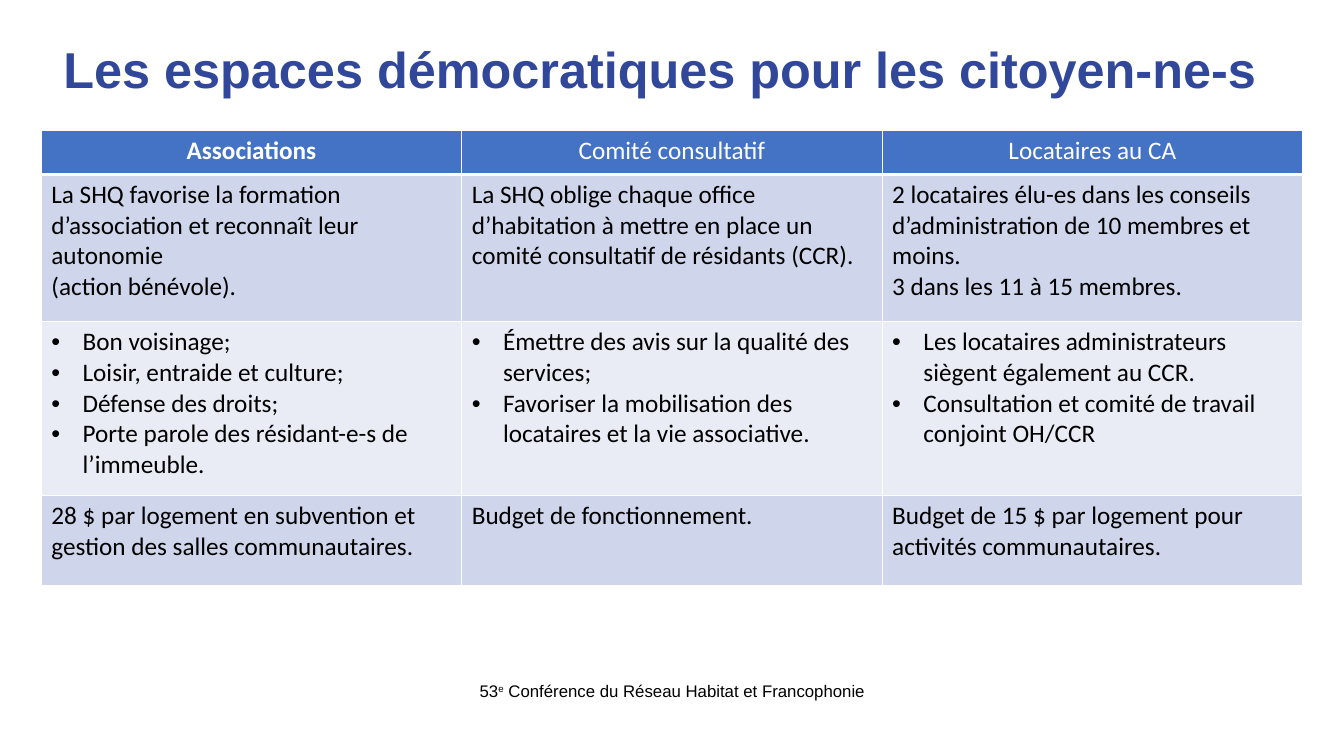
from lxml import etree
from pptx import Presentation
from pptx.dml.color import RGBColor
from pptx.enum import text
from pptx.oxml.ns import qn
from pptx.util import Inches, Pt

TITLE = "Les espaces démocratiques pour les citoyen-ne-s"
FOOTER = [("53", False), ("e", True), (" Conférence du Réseau Habitat et Francophonie", False)]
HEADINGS = ["Associations", "Comité consultatif", "Locataires au CA"]
# Each body row: height, bulleted, then the paragraphs of its three cells
BODY = [
    (1.46, False, [
        ["La SHQ favorise la formation d’association et reconnaît leur autonomie",
         "(action bénévole)."],
        ["La SHQ oblige chaque office d’habitation à mettre en place un comité "
         "consultatif de résidants (CCR)."],
        ["2 locataires élu-es dans les conseils d’administration de 10 membres et moins.",
         "3 dans les 11 à 15 membres."],
    ]),
    (1.73, True, [
        ["Bon voisinage;", "Loisir, entraide et culture;", "Défense des droits;",
         "Porte parole des résidant-e-s de l’immeuble."],
        ["Émettre des avis sur la qualité des services;",
         "Favoriser la mobilisation des locataires et la vie associative."],
        ["Les locataires administrateurs siègent également au CCR.",
         "Consultation et comité de travail conjoint OH/CCR"],
    ]),
    (0.89, False, [
        ["28 $ par logement en subvention et gestion des salles communautaires."],
        ["Budget de fonctionnement."],
        ["Budget de 15 $ par logement pour activités communautaires."],
    ]),
]
HEADING_HEIGHT, COLUMN_WIDTH, BULLET_INDENT = 0.44, 4.17, 0.31

THEME = {
    "title": {"name": "Arial", "size": 36, "color": "314799", "bold": True},
    "footer": {"name": "Arial", "size": 12, "color": "000000", "bold": False},
    "heading": {"name": "Calibri", "size": 18, "color": "FFFFFF", "bold": False},
    "body": {"name": "Calibri", "size": 18, "color": "000000", "bold": False},
    "heading_fill": "4472C4",
    "bands": ["CFD5EA", "E9EBF5"],
    "border": "FFFFFF",
}


def style(font, role):
    look = THEME[role]
    for key, value in {"name": look["name"], "size": Pt(look["size"]),
                       "bold": look["bold"]}.items():
        setattr(font, key, value)
    font.color.rgb = RGBColor.from_string(look["color"])


def add_text_frame(slide, *box):
    frame = slide.shapes.add_textbox(*map(Inches, box)).text_frame
    frame.word_wrap = True
    return frame


def add_bullet(paragraph):
    props = paragraph._p.get_or_add_pPr()
    props.set("marL", str(Inches(BULLET_INDENT)))
    props.set("indent", str(-Inches(BULLET_INDENT)))
    etree.SubElement(props, qn("a:buFont"), typeface="Arial")
    etree.SubElement(props, qn("a:buChar"), char="•")


def paint(cell, fill, bottom_width=1):
    """Give the cell its borders and its fill."""
    props = cell._tc.get_or_add_tcPr()
    for side, width in {"L": 1, "R": 1, "T": 1, "B": bottom_width}.items():
        line = etree.SubElement(props, qn(f"a:ln{side}"), w=str(Pt(width)))
        solid = etree.SubElement(line, qn("a:solidFill"))
        etree.SubElement(solid, qn("a:srgbClr"), val=THEME["border"])
    cell.fill.solid()
    cell.fill.fore_color.rgb = RGBColor.from_string(fill)


def write(cell, lines, role, bulleted=False, align=None):
    frame = cell.text_frame
    for index, line in enumerate(lines):
        paragraph = frame.add_paragraph() if index else frame.paragraphs[0]
        paragraph.alignment = align
        if bulleted:
            add_bullet(paragraph)
        run = paragraph.add_run()
        run.text = line
        style(run.font, role)


def add_title(slide):
    paragraph = add_text_frame(slide, 0.53, 0.4, 12.32, 1.45).paragraphs[0]
    paragraph.line_spacing = 0.9
    run = paragraph.add_run()
    run.text = TITLE
    style(run.font, "title")


def add_footer(slide):
    paragraph = add_text_frame(slide, 4.42, 6.7, 4.5, 0.4).paragraphs[0]
    paragraph.alignment = text.PP_ALIGN.CENTER
    for words, raised in FOOTER:
        run = paragraph.add_run()
        run.text = words
        style(run.font, "footer")
        if raised:
            run.font._element.set("baseline", "30000")


def add_spaces_table(slide):
    heights = [HEADING_HEIGHT] + [height for height, _, _ in BODY]
    columns = len(HEADINGS)
    table = slide.shapes.add_table(
        len(heights), columns, Inches(0.41), Inches(1.29),
        Inches(COLUMN_WIDTH * columns), Inches(sum(heights))).table
    for column in table.columns:
        column.width = Inches(COLUMN_WIDTH)
    for row, height in zip(table.rows, heights):
        row.height = Inches(height)

    for col, heading in enumerate(HEADINGS):
        cell = table.cell(0, col)
        paint(cell, THEME["heading_fill"], bottom_width=3)
        write(cell, [heading], "heading", align=text.PP_ALIGN.CENTER)
        cell.text_frame.paragraphs[0].runs[0].font.bold = col == 0
    for row, (_, bulleted, cells) in enumerate(BODY):
        for col, lines in enumerate(cells):
            cell = table.cell(row + 1, col)
            paint(cell, THEME["bands"][row % 2])
            write(cell, lines, "body", bulleted)


def main():
    deck = Presentation()
    deck.slide_width, deck.slide_height = Inches(13.33), Inches(7.5)
    slide = deck.slides.add_slide(deck.slide_layouts[6])
    add_title(slide)
    add_footer(slide)
    add_spaces_table(slide)
    deck.save("out.pptx")


if __name__ == "__main__":
    main()
